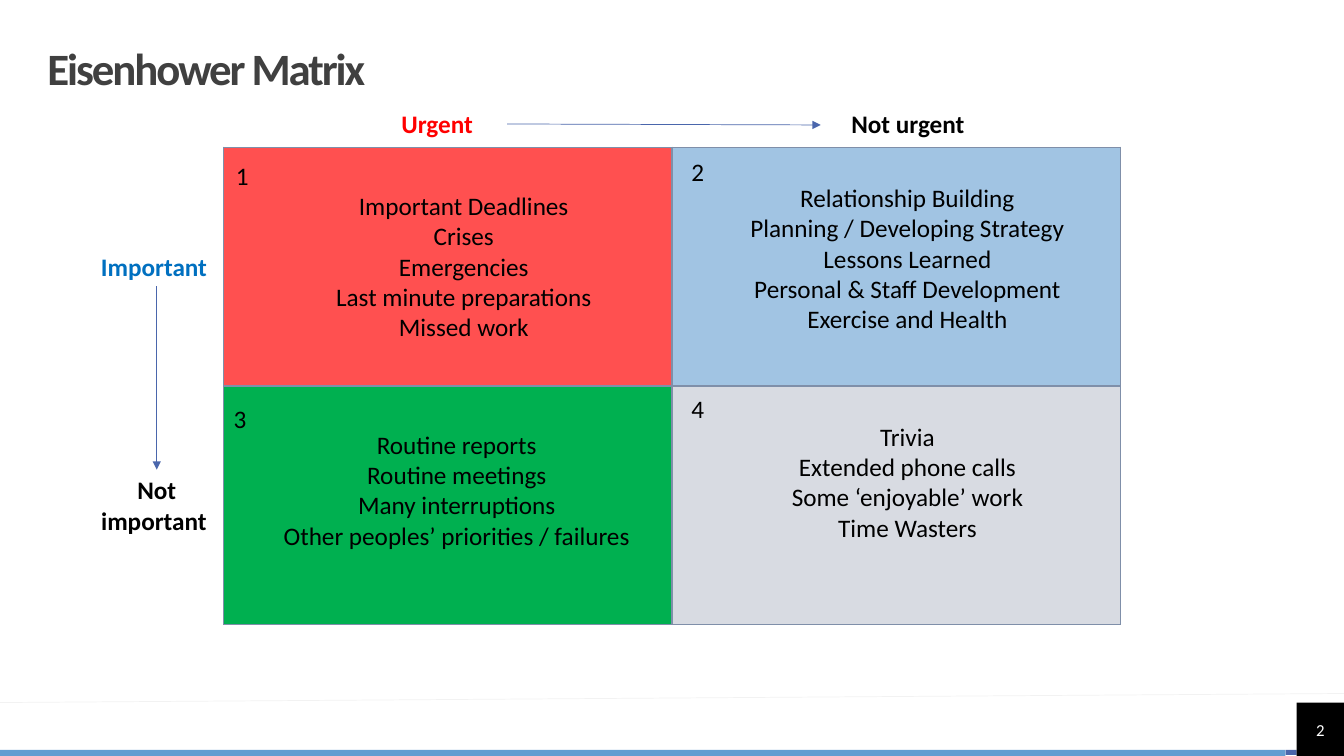
import lxml.etree
import pptx
import pptx.dml.color
import pptx.enum.shapes
import pptx.enum.text
import pptx.oxml.ns
import pptx.util

RGB = pptx.dml.color.RGBColor
ALIGN = pptx.enum.text.PP_ALIGN
MIDDLE = pptx.enum.text.MSO_ANCHOR.MIDDLE
qn = pptx.oxml.ns.qn

BLACK = RGB(0x00, 0x00, 0x00)
WHITE = RGB(0xFF, 0xFF, 0xFF)
TITLE_GREY = RGB(0x40, 0x40, 0x40)
RULE_GREY = RGB(0xF2, 0xF2, 0xF2)
BORDER_GREY = RGB(0x7F, 0x8F, 0xA9)
SKY_BLUE = RGB(0x62, 0x9D, 0xD1)
NAVY = RGB(0x4A, 0x66, 0xAC)
URGENT_RED = RGB(0xFF, 0x00, 0x00)
IMPORTANT_BLUE = RGB(0x00, 0x70, 0xC0)
QUADRANT_FILLS = [
    [RGB(0xFF, 0x50, 0x50), RGB(0xA1, 0xC4, 0xE3)],
    [RGB(0x00, 0xB0, 0x50), RGB(0xD8, 0xDB, 0xE2)],
]

PX_PER_INCH = 100


def px(n):
    return pptx.util.Emu(n * 914400 // PX_PER_INCH)


class SlideBuilder:
    font = "Calibri"
    size = 18

    def __init__(self, prs):
        self.slide = prs.slides.add_slide(prs.slide_layouts[5])
        self.shapes = self.slide.shapes

    def add_lines(self, tf, lines, color=BLACK, size=None, bold=False, align=ALIGN.CENTER):
        for i, line in enumerate(lines):
            p = tf.paragraphs[0] if i == 0 else tf.add_paragraph()
            p.alignment = align
            r = p.add_run()
            r.text = line
            r.font.name = self.font
            r.font.size = pptx.util.Pt(size or self.size)
            r.font.bold = bold
            r.font.color.rgb = color

    def clear_insets(self, tf):
        tf.margin_left = tf.margin_top = tf.margin_right = tf.margin_bottom = 0
        tf.vertical_anchor = MIDDLE

    def title(self, text, x, y, w, h):
        sp = self.shapes.title
        sp.left, sp.top, sp.width, sp.height = map(px, (x, y, w, h))
        tf = sp.text_frame
        self.clear_insets(tf)
        tf.auto_size = pptx.enum.text.MSO_AUTO_SIZE.NONE
        self.add_lines(tf, [text], TITLE_GREY, 32, True, ALIGN.LEFT)
        p = tf.paragraphs[0]
        p.line_spacing = 0.9
        p.runs[0].font._element.set("spc", "-150")

    def rect(self, x, y, w, h, fill):
        sp = self.shapes.add_shape(
            pptx.enum.shapes.MSO_SHAPE.RECTANGLE, *map(px, (x, y, w, h)))
        sp.shadow.inherit = False
        sp.fill.solid()
        sp.fill.fore_color.rgb = fill
        sp.line.fill.background()
        return sp

    def text(self, lines, x, y, w, h, wrap=False, **style):
        sp = self.shapes.add_textbox(*map(px, (x, y, w, h)))
        tf = sp.text_frame
        tf.word_wrap = wrap
        tf.auto_size = pptx.enum.text.MSO_AUTO_SIZE.SHAPE_TO_FIT_TEXT
        self.add_lines(tf, lines, **style)
        return sp

    def line(self, x1, y1, x2, y2, color, arrow=False):
        cx = self.shapes.add_connector(
            pptx.enum.shapes.MSO_CONNECTOR.STRAIGHT, *map(px, (x1, y1, x2, y2)))
        cx.line.color.rgb = color
        cx.line.width = pptx.util.Pt(0.5)
        if arrow:
            ln = cx._element.spPr.find(qn("a:ln"))
            lxml.etree.SubElement(ln, qn("a:tailEnd"), type="triangle")
        lxml.etree.SubElement(cx._element.spPr, qn("a:effectLst"))
        return cx

    def border(self, cell, color, width):
        tcPr = cell._tc.get_or_add_tcPr()
        for side in ("a:lnL", "a:lnR", "a:lnT", "a:lnB"):
            ln = lxml.etree.SubElement(tcPr, qn(side), w=str(pptx.util.Pt(width)))
            fill = lxml.etree.SubElement(ln, qn("a:solidFill"))
            lxml.etree.SubElement(fill, qn("a:srgbClr"), val=str(color))

    def table(self, fills, x, y, w, h):
        table = self.shapes.add_table(
            len(fills), len(fills[0]), *map(px, (x, y, w, h))).table
        table.first_row = table.horz_banding = False
        for i, row in enumerate(fills):
            for j, fill in enumerate(row):
                cell = table.cell(i, j)
                self.border(cell, BORDER_GREY, 1)
                cell.fill.solid()
                cell.fill.fore_color.rgb = fill


def main():
    prs = pptx.Presentation()
    prs.slide_width, prs.slide_height = px(1333), px(750)
    s = SlideBuilder(prs)

    s.rect(0, 744, 1275, 7, SKY_BLUE)
    s.rect(1275, 744, 11, 5, NAVY)
    s.line(1333, 688, 0, 697, RULE_GREY)
    badge = s.rect(1286, 697, 47, 54, BLACK)
    s.clear_insets(badge.text_frame)
    s.add_lines(badge.text_frame, ["2"], WHITE, 12)

    s.title("Eisenhower Matrix", 47, 47, 1239, 47)
    s.table(QUADRANT_FILLS, 222, 146, 889, 474)

    axis_labels = [
        ("Urgent", 364, 103, 40, URGENT_RED),
        ("Not urgent", 831, 103, 40, BLACK),
        ("Important ", 86, 244, 40, IMPORTANT_BLUE),
        ("Not important ", 86, 466, 71, BLACK),
    ]
    urgent, _, important, not_important = [
        s.text([label], x, y, 139, h, wrap=True, color=color, bold=True)
        for label, x, y, h, color in axis_labels
    ]
    urgency = s.line(503, 123, 814, 124, NAVY, arrow=True)
    urgency.begin_connect(urgent, 3)
    importance = s.line(155, 284, 155, 466, NAVY, arrow=True)
    importance.begin_connect(important, 2)
    importance.end_connect(not_important, 0)

    quadrants = [
        ((224, 154), (322, 184, 276, 192),
         ["Important Deadlines", "Crises", "Emergencies",
          "Last minute preparations", "Missed work"]),
        ((676, 150), (731, 176, 338, 192),
         ["Relationship Building", "Planning / Developing Strategy",
          "Lessons Learned", "Personal & Staff Development",
          "Exercise and Health"]),
        ((222, 395), (269, 421, 368, 162),
         ["Routine reports", "Routine meetings", "Many interruptions",
          "Other peoples’ priorities / failures"]),
        ((676, 385), (774, 413, 252, 162),
         ["Trivia", "Extended phone calls", "Some ‘enjoyable’ work",
          "Time Wasters"]),
    ]
    for number, (corner, box, tasks) in enumerate(quadrants, 1):
        s.text(tasks, *box)
        s.text([str(number)], *corner, 33, 40, align=ALIGN.LEFT)

    prs.save("out.pptx")


if __name__ == "__main__":
    main()
